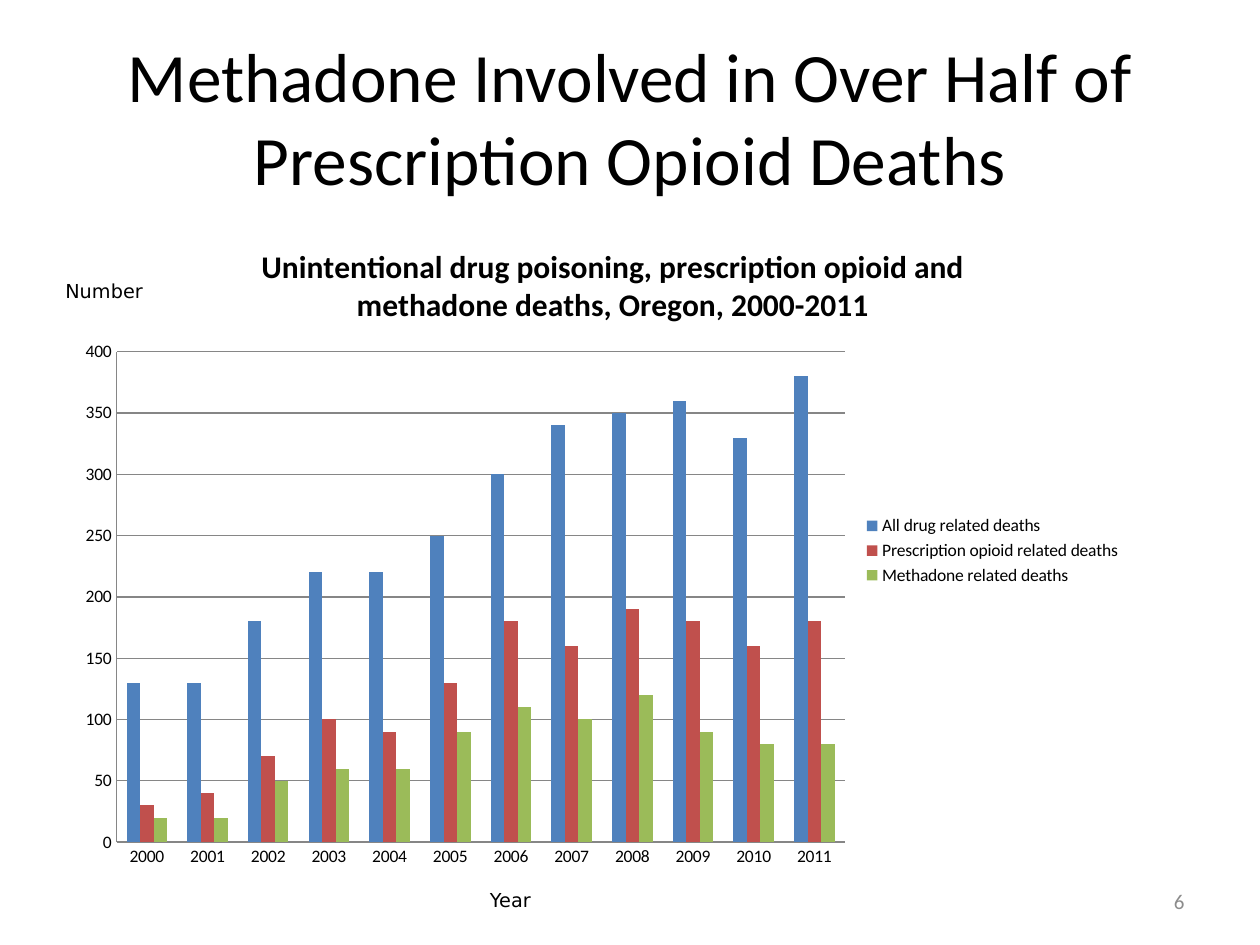
from dataclasses import dataclass

from lxml import etree
from pptx import Presentation
from pptx.chart.data import CategoryChartData
from pptx.dml.color import RGBColor
from pptx.enum import chart as charts, text
from pptx.oxml.ns import qn
from pptx.util import Inches, Pt


@dataclass(frozen=True)
class Theme:
    font: str = "Calibri"
    label_font: str = "DejaVu Sans"
    ink: str = "000000"
    muted: str = "8C8C8C"
    grid: str = "868686"
    series: tuple = ("4F81BD", "C0504D", "9BBB59")
    title_size: float = 39.6
    chart_title_size: float = 18
    page_size: float = 12
    label_size: float = 11
    chart_size: float = 10


THEME = Theme()
YEARS = [str(year) for year in range(2000, 2012)]
DEATHS = {
    "All drug related deaths":
        (130, 130, 180, 220, 220, 250, 300, 340, 350, 360, 330, 380),
    "Prescription opioid related deaths":
        (30, 40, 70, 100, 90, 130, 180, 160, 190, 180, 160, 180),
    "Methadone related deaths":
        (20, 20, 50, 60, 60, 90, 110, 100, 120, 90, 80, 80),
}


def style_font(font, size, color=THEME.ink, name=THEME.font, bold=False):
    font.name = name
    font.size = Pt(size)
    font.bold = bold
    font.color.rgb = RGBColor.from_string(color)


def add_text(slide, box, content, size, color=THEME.ink, name=THEME.font,
             align=text.PP_ALIGN.LEFT, anchor=text.MSO_ANCHOR.TOP, wrap=True):
    shape = slide.shapes.add_textbox(*map(Inches, box))
    frame = shape.text_frame
    frame.word_wrap = wrap
    frame.vertical_anchor = anchor
    paragraph = frame.paragraphs[0]
    paragraph.text = content
    paragraph.alignment = align
    style_font(paragraph.font, size, color, name)


def place_chart_part(element, index, **settings):
    """Give a chart part a manual layout, as fractions of the chart."""
    layout = element.find(qn("c:layout"))
    if layout is not None:
        element.remove(layout)
    layout = etree.Element(qn("c:layout"))
    element.insert(index, layout)
    manual = etree.SubElement(layout, qn("c:manualLayout"))
    for tag, value in settings.items():
        etree.SubElement(manual, qn(f"c:{tag}")).set("val", str(value))


def style_axis(axis):
    axis.major_tick_mark = charts.XL_TICK_MARK.NONE
    axis.minor_tick_mark = charts.XL_TICK_MARK.NONE
    axis.format.line.color.rgb = RGBColor.from_string(THEME.grid)
    axis.format.line.width = Pt(0.75)


def add_deaths_chart(slide, box):
    data = CategoryChartData()
    data.categories = YEARS
    for name, values in DEATHS.items():
        data.add_series(name, values)
    chart = slide.shapes.add_chart(
        charts.XL_CHART_TYPE.COLUMN_CLUSTERED, *map(Inches, box), data).chart
    style_font(chart.font, THEME.chart_size)

    chart.has_title = True
    paragraph = chart.chart_title.text_frame.paragraphs[0]
    paragraph.text = ("Unintentional drug poisoning, prescription opioid and "
                      "methadone deaths, Oregon, 2000-2011")
    style_font(paragraph.font, THEME.chart_title_size, bold=True)
    chart.chart_title.include_in_layout = False

    chart.has_legend = True
    chart.legend.position = charts.XL_LEGEND_POSITION.RIGHT
    chart.legend.include_in_layout = False

    plot = chart.plots[0]
    plot.gap_width = 150
    plot.overlap = 0
    plot.vary_by_categories = False
    for series, color in zip(plot.series, THEME.series):
        series.format.fill.solid()
        series.format.fill.fore_color.rgb = RGBColor.from_string(color)

    style_axis(chart.category_axis)
    values = chart.value_axis
    style_axis(values)
    values.minimum_scale, values.maximum_scale, values.major_unit = 0, 400, 50
    values.has_major_gridlines = True
    grid_line = values.major_gridlines.format.line
    grid_line.color.rgb = RGBColor.from_string(THEME.grid)
    grid_line.width = Pt(0.75)

    place_chart_part(chart._chartSpace.chart.plotArea, 0, layoutTarget="inner",
                     xMode="edge", yMode="edge", x=0.05, y=0.2, w=0.68, h=0.74)
    place_chart_part(chart.chart_title._element, 1,
                     xMode="edge", yMode="edge", x=0.18, y=0.03)


def main():
    presentation = Presentation()
    presentation.slide_width = Inches(10)
    presentation.slide_height = Inches(7.5)
    slide = presentation.slides.add_slide(presentation.slide_layouts[6])

    middle = text.MSO_ANCHOR.MIDDLE
    add_text(slide, (0.5, 0.3, 9, 1.25),
             "Methadone Involved in Over Half of Prescription Opioid Deaths",
             THEME.title_size, align=text.PP_ALIGN.CENTER, anchor=middle)
    add_text(slide, (7.17, 6.95, 2.33, 0.4), "6", THEME.page_size, THEME.muted,
             align=text.PP_ALIGN.RIGHT, anchor=middle)
    add_deaths_chart(slide, (0.5, 1.74, 8.5, 5.26))
    for label, box in (("Year", (3.79, 7, 0.55, 0.29)),
                       ("Number", (0.42, 2.17, 0.82, 0.29))):
        add_text(slide, box, label, THEME.label_size, name=THEME.label_font,
                 wrap=False)

    presentation.save("out.pptx")


if __name__ == "__main__":
    main()
